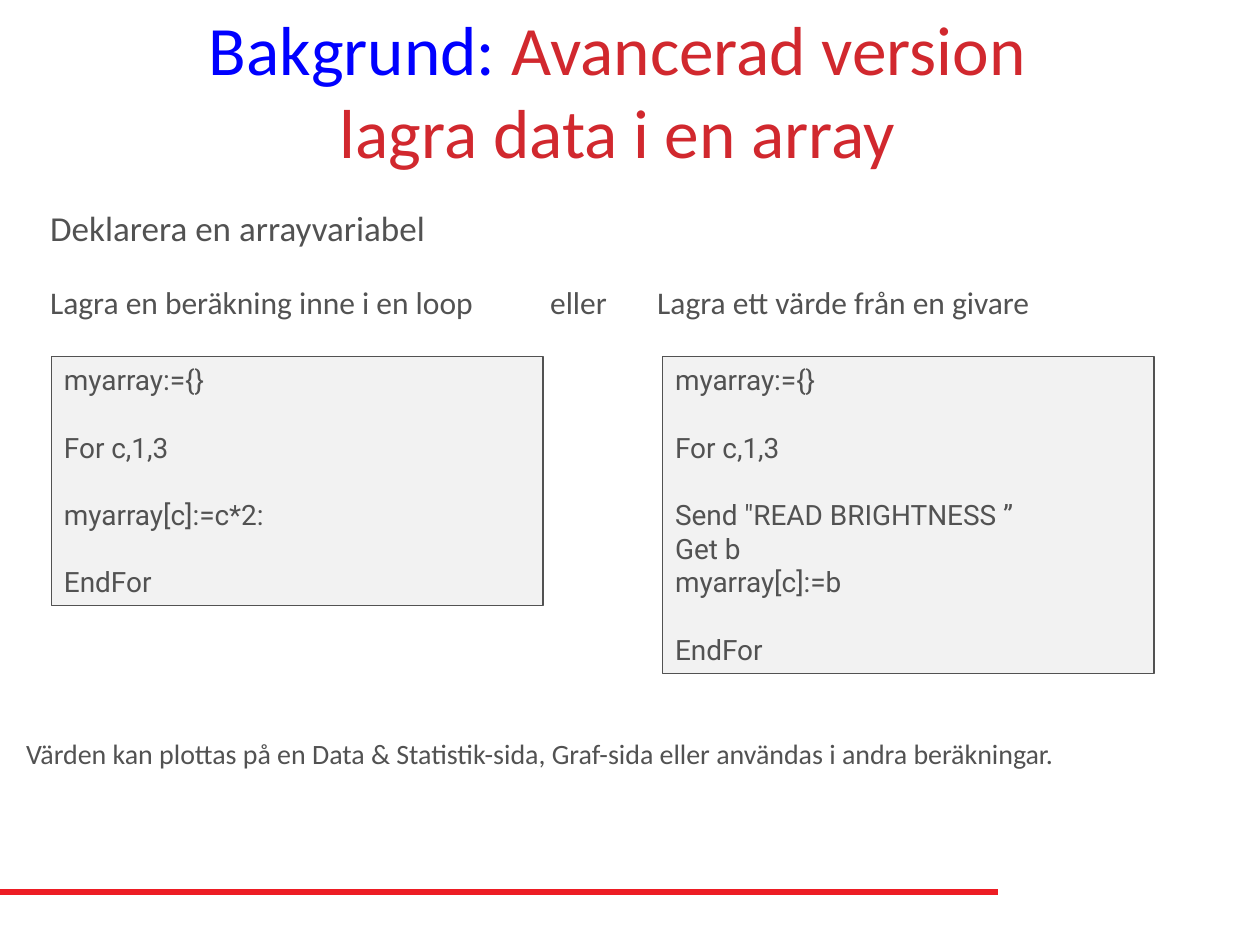
from dataclasses import dataclass
from lxml import etree
from pptx import Presentation
from pptx.dml.color import RGBColor
from pptx.enum import shapes, text
from pptx.oxml.ns import qn
from pptx.util import Pt


@dataclass(frozen=True)
class Theme:
    blue: str = "0000FF"
    red: str = "D1282E"
    rule: str = "ED1D24"
    ink: str = "525252"
    panel: str = "F2F2F2"
    body: str = "Calibri"
    code: str = "Roboto"
    head: float = 39.6
    lead: float = 20
    sub: float = 18
    small: float = 16


T = Theme()

TITLE = [("Bakgrund: ", T.blue), ("Avancerad version\nlagra data i en array", T.red)]
LEAD = "Deklarera en arrayvariabel"
SUB = "Lagra en beräkning inne i en loop\teller\tLagra ett värde från en givare"
NOTE = "Värden kan plottas på en Data & Statistik-sida, Graf-sida eller användas i andra beräkningar."
CODE = [
    [["myarray:={}"], ["For c,1,3"], ["myarray[c]:=c*2:"], ["EndFor"]],
    [["myarray:={}"], ["For c,1,3"],
     ['Send "READ BRIGHTNESS ”', "Get b", "myarray[c]:=b"], ["EndFor"]],
]
STOPS = [285.7, 346.9]
LEFT, TOP, WIDE, STEP = 29.5, 203.8, 280.8, 349.2
ROW, PAD = 19.3, 3.6


def rgb(tone):
    return RGBColor.from_string(tone)


def write(frame, words, size=T.small, font=T.body, tone=T.ink, gap=0,
          align=text.PP_ALIGN.LEFT, stops=(), first=False):
    para = frame.paragraphs[0] if first else frame.add_paragraph()
    if stops:
        tabs = etree.SubElement(para._p.get_or_add_pPr(), qn("a:tabLst"))
        for stop in stops:
            etree.SubElement(tabs, qn("a:tab"), pos=str(int(Pt(stop))), algn="l")
    para.alignment = align
    if gap:
        para.space_before = Pt(gap)
    parts = [(words, tone)] if isinstance(words, str) else words
    for part, hue in parts:
        for i, line in enumerate(part.split("\n")):
            if i:
                para.add_line_break()
            run = para.add_run()
            run.text = line
            run.font.size = Pt(size)
            run.font.name = font
            run.font.color.rgb = rgb(hue)


def setup(shape, anchor=text.MSO_ANCHOR.TOP):
    frame = shape.text_frame
    frame.word_wrap = True
    frame.vertical_anchor = anchor
    return frame


def field(slide, x, y, w, h, **how):
    return setup(slide.shapes.add_textbox(Pt(x), Pt(y), Pt(w), Pt(h)), **how)


def panel(slide, x, groups):
    count = sum(map(len, groups)) + len(groups) - 1
    box = slide.shapes.add_shape(shapes.MSO_SHAPE.RECTANGLE, Pt(x), Pt(TOP),
                                 Pt(WIDE), Pt(round(count * ROW + 2 * PAD, 2)))
    box.shadow.inherit = False
    box.fill.solid()
    box.fill.fore_color.rgb = rgb(T.panel)
    box.line.color.rgb = rgb(T.ink)
    box.line.width = Pt(0.75)
    frame = setup(box)
    for g, group in enumerate(groups):
        for i, line in enumerate(group):
            write(frame, line, font=T.code, first=g + i == 0,
                  gap=ROW if g and not i else 0)


def main():
    deck = Presentation()
    deck.slide_width, deck.slide_height = Pt(720), Pt(540)
    slide = deck.slides.add_slide(deck.slide_layouts[6])

    rule = slide.shapes.add_connector(shapes.MSO_CONNECTOR.STRAIGHT,
                                      Pt(0), Pt(509.8), Pt(570.2), Pt(509.8))
    rule.line.color.rgb = rgb(T.rule)
    rule.line.width = Pt(3)
    etree.SubElement(rule._element.spPr, qn("a:effectLst"))

    head = field(slide, 21.6, 5.8, 662.4, 90, anchor=text.MSO_ANCHOR.MIDDLE)
    write(head, TITLE, size=T.head, align=text.PP_ALIGN.CENTER, first=True)

    intro = field(slide, 21.6, 114.5, 676, 72.7)
    write(intro, LEAD, size=T.lead, first=True)
    write(intro, SUB, size=T.sub, gap=19.5, stops=STOPS)

    for i, groups in enumerate(CODE):
        panel(slide, LEFT + i * STEP, groups)

    write(field(slide, 7.9, 417.6, 702.7, 46), NOTE, first=True)
    deck.save("out.pptx")


if __name__ == "__main__":
    main()
